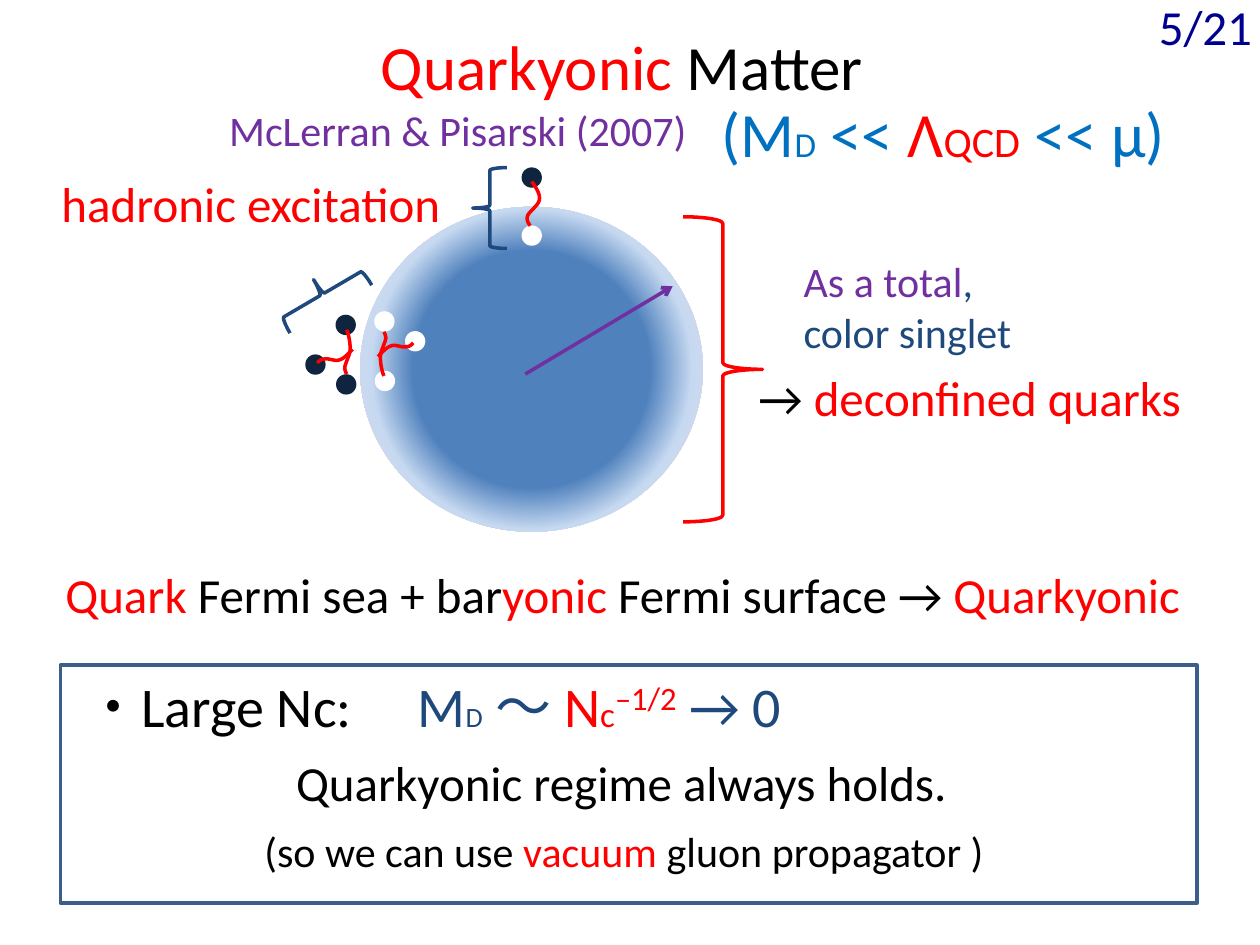
from lxml import etree
from pptx import Presentation, util as u
from pptx.dml.color import RGBColor
from pptx.enum import shapes as es, text as et
from pptx.oxml import parse_xml
from pptx.oxml.ns import nsdecls, qn

RED, BLACK, NAVY, PURPLE = "FF0000", "000000", "1F497D", "7030A0"
SKY, DARK, WHITE = "0070C0", "0F243E", "FFFFFF"
DOT = 0.41


def rgb(code):
    return RGBColor.from_string(code)


def cm(*nums):
    return [u.Cm(n) for n in nums]


def add_run(para, words, size, hue, base=None):
    run = para.add_run()
    run.text = words
    font = run.font
    font.name, font.size = "Calibri", u.Pt(size)
    font.color.rgb = rgb(hue)
    if base:
        font._element.set("baseline", str(base))


def fill_text(frame, lines):
    for num, runs in enumerate(lines):
        para = frame.add_paragraph() if num else frame.paragraphs[0]
        for run in runs:
            add_run(para, *run)


def add_text(slide, box, *lines):
    frame = slide.shapes.add_textbox(*cm(*box)).text_frame
    frame.word_wrap = True
    fill_text(frame, lines)
    return frame


def add_title(slide, box, runs):
    title = slide.shapes.title
    title.left, title.top, title.width, title.height = cm(*box)
    frame = title.text_frame
    frame.auto_size = et.MSO_AUTO_SIZE.NONE
    frame.vertical_anchor = et.MSO_ANCHOR.MIDDLE
    fill_text(frame, [runs])
    frame.paragraphs[0].alignment = et.PP_ALIGN.CENTER


def set_tab(para, pos):
    tabs = etree.SubElement(para._p.get_or_add_pPr(), qn("a:tabLst"))
    etree.SubElement(tabs, qn("a:tab"), pos=str(u.Cm(pos)), algn="l")


def set_line(shape, hue):
    shape.line.color.rgb = rgb(hue)
    shape.line.width = u.Pt(2)


def add_shape(slide, kind, box, line=None, fill=None, turn=0):
    shape = slide.shapes.add_shape(kind, *cm(*box))
    shape.shadow.inherit = False
    shape.rotation = turn
    if fill:
        shape.fill.solid()
        shape.fill.fore_color.rgb = rgb(fill)
    else:
        shape.fill.background()
    if line:
        set_line(shape, line)
    else:
        shape.line.fill.background()
    return shape


def add_brace(slide, box, hue, turn=0):
    add_shape(slide, es.MSO_SHAPE.LEFT_BRACE, box, hue, turn=turn)


def add_dot(slide, x, y, hue):
    box = (x - DOT / 2, y - DOT / 2, DOT, DOT)
    add_shape(slide, es.MSO_SHAPE.OVAL, box, fill=hue)


def add_sea(slide, box):
    sea = add_shape(slide, es.MSO_SHAPE.OVAL, box)
    stops = "".join(
        f'<a:gs pos="{pos}000"><a:srgbClr val="{hue}"/></a:gs>'
        for pos, hue in ((50, "4F81BD"), (68, "C6D9F1"), (100, "F2DCDB")))
    grad = parse_xml(
        f'<a:gradFill {nsdecls("a")} rotWithShape="1"><a:gsLst>{stops}</a:gsLst>'
        '<a:path path="circle"><a:fillToRect l="50000" t="50000" r="50000" b="50000"/>'
        '</a:path></a:gradFill>')
    props = sea._element.spPr
    props.replace(props.find(qn("a:noFill")), grad)


def add_arrow(slide, ends, hue):
    arrow = slide.shapes.add_connector(es.MSO_CONNECTOR.STRAIGHT, *cm(*ends))
    set_line(arrow, hue)
    etree.SubElement(arrow.line._get_or_add_ln(), qn("a:tailEnd"), type="arrow")
    etree.SubElement(arrow._element.spPr, qn("a:effectLst"))


def bend(a, b, c, d, t):
    s = 1 - t
    return [s**3 * p + 3 * s * s * t * q + 3 * s * t * t * r + t**3 * e
            for p, q, r, e in zip(a, b, c, d)]


def add_curve(slide, knots):
    spots = [cm(*knots[0])]
    for k in range(0, len(knots) - 1, 3):
        spots += [cm(*bend(*knots[k:k + 4], n / 8)) for n in range(1, 9)]
    path = slide.shapes.build_freeform(*spots[0])
    path.add_line_segments(spots[1:], close=False)
    curve = path.convert_to_shape()
    curve.shadow.inherit = False
    curve.fill.background()
    set_line(curve, RED)


def flip(spots):
    return [(14.73 - x, 14.23 - y) for x, y in spots]


def add_meson(slide):
    add_dot(slide, 10.72, 3.58, DARK)
    add_dot(slide, 10.72, 4.75, WHITE)
    add_curve(slide, [
        (10.72, 3.66), (10.8, 3.78), (10.9, 3.91), (10.87, 4.04), (10.85, 4.14),
        (10.67, 4.27), (10.64, 4.34), (10.59, 4.45), (10.69, 4.55), (10.69, 4.55)][:10])
    add_brace(slide, (9.53, 3.38, 0.69, 1.63), NAVY)


def add_baryons(slide):
    dots = [(6.97, 6.55), (6.36, 7.35), (6.98, 7.75)]
    stem = [(6.99, 6.65), (7.04, 6.78), (7.06, 6.91), (7.06, 7.04), (7.06, 7.14),
            (6.99, 7.26), (6.96, 7.37), (6.93, 7.44), (6.99, 7.54), (6.99, 7.54)]
    arm = [(7.11, 7.04), (7.01, 7.14), (6.93, 7.24), (6.83, 7.26), (6.76, 7.29),
           (6.6, 7.21), (6.53, 7.24), (6.45, 7.24), (6.4, 7.32), (6.4, 7.32)]
    for hue, turn in ((DARK, list), (WHITE, flip)):
        for x, y in turn(dots):
            add_dot(slide, x, y, hue)
        for knots in (stem, arm):
            add_curve(slide, turn(knots))
    add_brace(slide, (6.15, 4.98, 0.69, 1.91), NAVY, 59.6)


def add_panel(slide):
    frame = add_text(slide, (1.47, 13.41, 20, 1.63), [
        ("・Large Nc:\t", 32, BLACK), ("M", 32, NAVY), ("D", 16, NAVY),
        (" 〜 ", 32, NAVY), ("N", 32, RED), ("c", 20, RED),
        ("–1/2", 32, RED, 30000), (" → 0", 32, NAVY)])
    set_tab(frame.paragraphs[0], 6.7)
    add_text(slide, (5.08, 16.51, 16.31, 1.27), [
        ("(so we can use ", 24, BLACK), ("vacuum", 24, RED),
        (" gluon propagator )", 24, BLACK)])
    add_text(slide, (5.72, 15.04, 13.84, 1.45),
             [("Quarkyonic regime always holds.", 28, BLACK)])
    add_shape(slide, es.MSO_SHAPE.RECTANGLE, (1.22, 13.41, 22.91, 4.8), "3A5F8C")


def main():
    deck = Presentation()
    deck.slide_width, deck.slide_height = cm(25.4, 19.05)
    slide = deck.slides.add_slide(deck.slide_layouts[5])
    add_title(slide, (0.58, 0.41, 24.2, 1.8),
              [("Quarkyonic", 36, RED), (" Matter ", 36, BLACK)])
    add_sea(slide, (7.26, 4.17, 6.91, 6.55))
    add_arrow(slide, (10.59, 7.54, 13.56, 5.77), PURPLE)
    add_brace(slide, (13.77, 4.37, 1.6, 6.15), RED, 180)
    add_text(slide, (15.95, 5.03, 5.56, 2.31),
             [("As a total", 24, PURPLE), (",", 24, NAVY)],
             [("color singlet", 24, NAVY)])
    add_text(slide, (15.04, 7.29, 9.86, 1.45),
             [("→ ", 28, BLACK), ("deconfined quarks", 28, RED)])
    add_text(slide, (1.07, 11.25, 23.7, 1.45), [
        ("Quark", 28, RED), (" Fermi sea + bar", 28, BLACK), ("yonic", 28, RED),
        (" Fermi surface → ", 28, BLACK), ("Quarkyonic", 28, RED)])
    add_text(slide, (14.3, 1.78, 9.73, 1.8), [
        ("(M", 36, SKY), ("D", 20, SKY), (" << ", 36, SKY), ("Λ", 36, RED),
        ("QCD", 24, RED), (" << μ)", 36, SKY)])
    add_text(slide, (4.37, 1.98, 10.31, 1.27),
             [("McLerran & Pisarski (2007)", 24, PURPLE)])
    add_meson(slide)
    add_text(slide, (0.99, 3.38, 8.53, 1.45), [("hadronic excitation", 28, RED)])
    add_baryons(slide)
    add_panel(slide)
    add_text(slide, (23.11, -0.2, 2.5, 1.45), [("5/21", 28, "000090")])
    deck.save("out.pptx")


if __name__ == "__main__":
    main()
